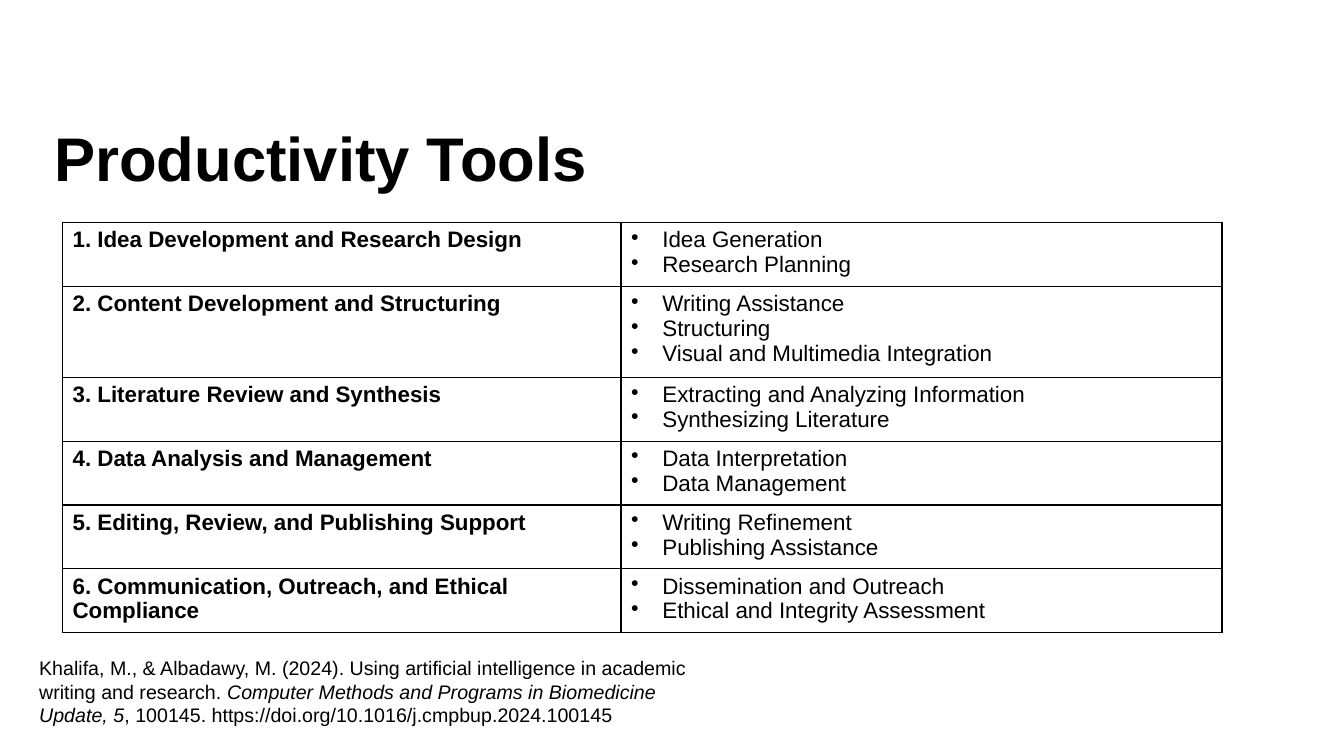
import lxml.etree
import pptx
import pptx.dml.color
import pptx.enum.text
import pptx.oxml.ns
import pptx.util

SLIDE_WIDTH = pptx.util.Inches(13.33)
SLIDE_HEIGHT = pptx.util.Inches(7.5)
INK, PAPER = "000000", "FFFFFF"
FONT = "Arial"
LINE_HEIGHT, CELL_PADDING, BULLET_INDENT = 0.25, 0.09, 0.31

TITLE_BOX = (0.44, 1.11, 11.5, 0.98)
TABLE_BOX = (0.62, 2.21, 11.5, 3.81)
CITATION_BOX = (0.29, 6.46, 6.67, 0.81)
TOPIC_WIDTH = 5.54

TOOLS = [
    ("Idea Development and Research Design",
     ["Idea Generation", "Research Planning"]),
    ("Content Development and Structuring",
     ["Writing Assistance", "Structuring", "Visual and Multimedia Integration"]),
    ("Literature Review and Synthesis",
     ["Extracting and Analyzing Information", "Synthesizing Literature"]),
    ("Data Analysis and Management",
     ["Data Interpretation", "Data Management"]),
    ("Editing, Review, and Publishing Support",
     ["Writing Refinement", "Publishing Assistance"]),
    ("Communication, Outreach, and Ethical Compliance",
     ["Dissemination and Outreach", "Ethical and Integrity Assessment"]),
]
CITATION = [
    ("Khalifa, M., & Albadawy, M. (2024). Using artificial intelligence in "
     "academic writing and research. ", False),
    ("Computer Methods and Programs in Biomedicine Update, 5", True),
    (", 100145. https://doi.org/10.1016/j.cmpbup.2024.100145", False),
]


def color(hex_code):
    """Turn a hex string into a colour."""
    return pptx.dml.color.RGBColor.from_string(hex_code)


def inches(box):
    """Turn a box in inches into lengths."""
    return [pptx.util.Inches(length) for length in box]


def add_run(paragraph, text, size, bold=False, italic=False):
    """Add one styled run to a paragraph."""
    run = paragraph.add_run()
    run.text = text
    run.font.name = FONT
    run.font.size = pptx.util.Pt(size)
    run.font.bold = bold
    run.font.italic = italic
    run.font.color.rgb = color(INK)


def add_bullet(paragraph):
    """Give a paragraph a round bullet with a hanging indent."""
    properties = paragraph._p.get_or_add_pPr()
    indent = pptx.util.Inches(BULLET_INDENT)
    properties.set("marL", str(indent))
    properties.set("indent", str(-indent))
    bullet = lxml.etree.SubElement(properties, pptx.oxml.ns.qn("a:buChar"))
    bullet.set("char", "•")


def style_cell(cell):
    """Give a cell a thin border on every side and a plain fill."""
    properties = cell._tc.get_or_add_tcPr()
    for side in ("lnL", "lnR", "lnT", "lnB"):
        border = lxml.etree.SubElement(properties, pptx.oxml.ns.qn(f"a:{side}"))
        border.set("w", str(pptx.util.Pt(1)))
        fill = lxml.etree.SubElement(border, pptx.oxml.ns.qn("a:solidFill"))
        ink = lxml.etree.SubElement(fill, pptx.oxml.ns.qn("a:srgbClr"))
        ink.set("val", INK)
    cell.fill.solid()
    cell.fill.fore_color.rgb = color(PAPER)


def add_title(slide, box):
    """Place the heading, centred vertically in its box."""
    frame = slide.shapes.add_textbox(*inches(box)).text_frame
    frame.word_wrap = True
    frame.vertical_anchor = pptx.enum.text.MSO_ANCHOR.MIDDLE
    heading = frame.paragraphs[0]
    heading.line_spacing = 0.9
    add_run(heading, "Productivity Tools", 44, bold=True)


def add_tools_table(slide, box):
    """Place the table of numbered topics and their bulleted tasks."""
    table = slide.shapes.add_table(len(TOOLS), 2, *inches(box)).table
    table.first_row = False
    table.horz_banding = False
    for column, width in zip(table.columns, (TOPIC_WIDTH, box[2] - TOPIC_WIDTH)):
        column.width = pptx.util.Inches(width)
    for number, (row, (topic, tasks)) in enumerate(zip(table.rows, TOOLS), 1):
        row.height = pptx.util.Inches(CELL_PADDING + LINE_HEIGHT * len(tasks))
        topic_cell, tasks_cell = row.cells
        style_cell(topic_cell)
        style_cell(tasks_cell)
        add_run(topic_cell.text_frame.paragraphs[0], f"{number}. {topic}", 16, bold=True)
        frame = tasks_cell.text_frame
        for position, task in enumerate(tasks):
            paragraph = frame.add_paragraph() if position else frame.paragraphs[0]
            add_bullet(paragraph)
            add_run(paragraph, task, 16)


def add_citation(slide, box):
    """Place the reference below the table."""
    frame = slide.shapes.add_textbox(*inches(box)).text_frame
    frame.word_wrap = True
    frame.auto_size = pptx.enum.text.MSO_AUTO_SIZE.SHAPE_TO_FIT_TEXT
    for text, italic in CITATION:
        add_run(frame.paragraphs[0], text, 14, italic=italic)


def main():
    """Build the slide and save it."""
    presentation = pptx.Presentation()
    presentation.slide_width = SLIDE_WIDTH
    presentation.slide_height = SLIDE_HEIGHT
    slide = presentation.slides.add_slide(presentation.slide_layouts[6])
    slide.background.fill.solid()
    slide.background.fill.fore_color.rgb = color(PAPER)
    add_title(slide, TITLE_BOX)
    add_tools_table(slide, TABLE_BOX)
    add_citation(slide, CITATION_BOX)
    presentation.save("out.pptx")


if __name__ == "__main__":
    main()
